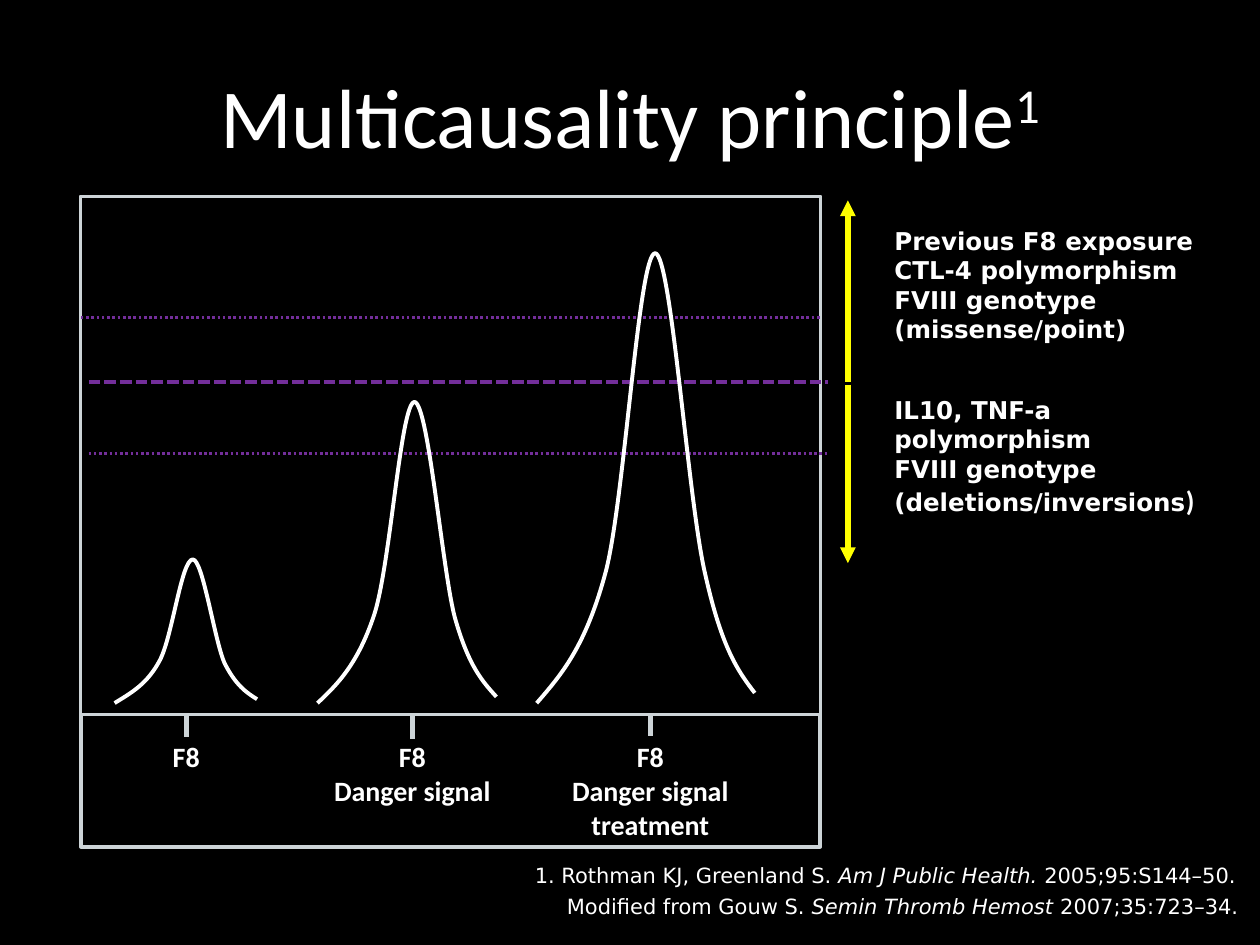
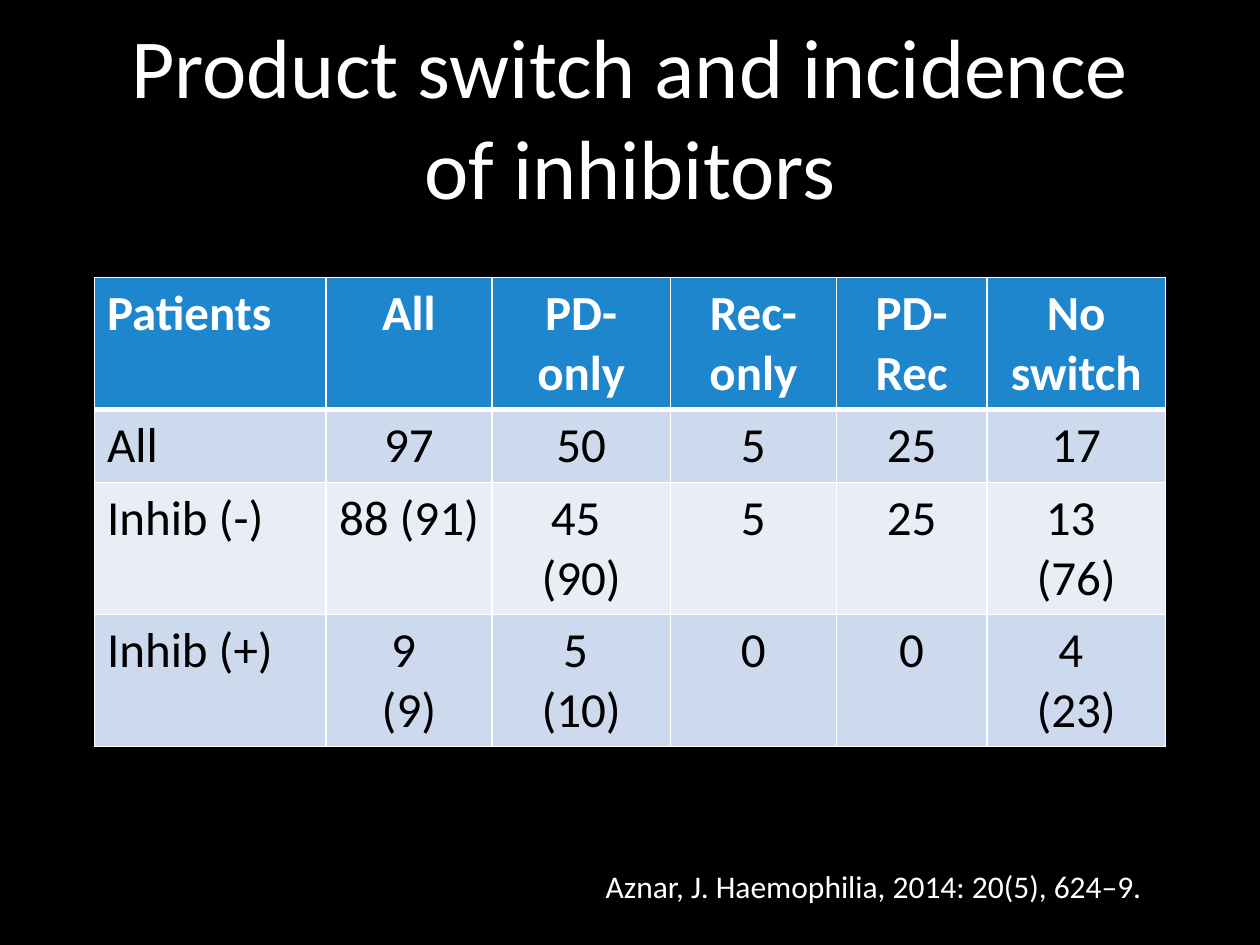
"""Build two black slides: a curve diagram and a patient table."""
from dataclasses import dataclass

from lxml import etree
from pptx import Presentation
from pptx.dml.color import RGBColor
from pptx.enum.dml import MSO_LINE
from pptx.enum.shapes import MSO_CONNECTOR, MSO_SHAPE
from pptx.enum.text import MSO_ANCHOR, PP_ALIGN
from pptx.oxml.ns import qn
from pptx.util import Pt

LEFT, MID, RIGHT = PP_ALIGN.LEFT, PP_ALIGN.CENTER, PP_ALIGN.RIGHT
TOP, CENTER = MSO_ANCHOR.TOP, MSO_ANCHOR.MIDDLE
DOT, DASH = MSO_LINE.ROUND_DOT, MSO_LINE.SQUARE_DOT
STRAIGHT, RECT = MSO_CONNECTOR.STRAIGHT, MSO_SHAPE.RECTANGLE


@dataclass(frozen=True)
class Theme:
    back: str = "000000"
    ink: str = "FFFFFF"
    edge: str = "CDD4D7"
    limit: str = "732E9A"
    arrow: str = "FFFF00"
    head: str = "1D86CD"
    bands: tuple = ("CDD9ED", "E8EDF6")
    main: str = "Calibri"
    alt: str = "DejaVu Sans"
    title: int = 48
    cell: int = 28
    cite: int = 18
    label: int = 16
    note: int = 14
    ref: int = 12


def rgb(code):
    return RGBColor.from_string(code)


class Deck:
    def __init__(self, theme):
        self.theme = theme
        self.show = Presentation()
        self.show.slide_width, self.show.slide_height = Pt(720), Pt(540)

    def page(self, title):
        self.slide = self.show.slides.add_slide(self.show.slide_layouts[6])
        fill = self.slide.background.fill
        fill.solid()
        fill.fore_color.rgb = rgb(self.theme.back)
        return self.text((54, 9.6, 612, 112.3), title, self.theme.title,
                         align=MID, anchor=CENTER)

    def style(self, run, size, font=None, color=None, bold=False, slant=False):
        face = run.font
        face.size, face.name = Pt(size), font or self.theme.main
        face.color.rgb = rgb(color or self.theme.ink)
        face.bold, face.italic = bold, slant

    def fill_text(self, frame, words, size, align, **look):
        frame.text = words
        for para in frame.paragraphs:
            para.alignment = align
            for run in para.runs:
                self.style(run, size, **look)

    def text(self, box, words, size, align=LEFT, anchor=TOP, **look):
        frame = self.slide.shapes.add_textbox(*map(Pt, box)).text_frame
        frame.word_wrap, frame.vertical_anchor = True, anchor
        self.fill_text(frame, words, size, align, **look)
        return frame.paragraphs

    def tail(self, para, words, size, **look):
        run = para.add_run()
        run.text = words
        self.style(run, size, **look)
        return run

    def refer(self, box, lead, work, rest):
        size, font = self.theme.ref, self.theme.alt
        para = self.text(box, lead, size, RIGHT, font=font)[0]
        self.tail(para, work, size, font=font, slant=True)
        self.tail(para, rest, size, font=font)

    def stroke(self, shape, color, width):
        shape.line.color.rgb, shape.line.width = rgb(color), Pt(width)

    def rect(self, box, width):
        shape = self.slide.shapes.add_shape(RECT, *map(Pt, box))
        shape.shadow.inherit = False
        shape.fill.solid()
        shape.fill.fore_color.rgb = rgb(self.theme.back)
        self.stroke(shape, self.theme.edge, width)

    def line(self, ends, color, width, dash=None, tip=False):
        link = self.slide.shapes.add_connector(STRAIGHT, *map(Pt, ends))
        self.stroke(link, color, width)
        if dash:
            link.line.dash_style = dash
        props = link.element.spPr
        if tip:
            etree.SubElement(props.find(qn("a:ln")), qn("a:tailEnd"), type="triangle")
        etree.SubElement(props, qn("a:effectLst"))

    def curve(self, dots):
        pen = self.slide.shapes.build_freeform(*map(Pt, dots[0]))
        pen.add_line_segments([(Pt(x), Pt(y)) for x, y in dots[1:]], close=False)
        shape = pen.convert_to_shape()
        legs = list(shape.element.iter(qn("a:lnTo")))
        for one, two, end in zip(*[iter(legs)] * 3):
            bend = etree.Element(qn("a:cubicBezTo"))
            one.addprevious(bend)
            for leg in (one, two, end):
                bend.append(leg[0])
                leg.getparent().remove(leg)
        shape.shadow.inherit = False
        shape.fill.background()
        self.stroke(shape, self.theme.ink, 2.25)

    def border(self, cell, sides):
        props = cell._tc.get_or_add_tcPr()
        for spot, (side, width) in enumerate(sides.items()):
            edge = etree.Element(qn(f"a:ln{side}"), w=str(Pt(width)))
            paint = etree.SubElement(edge, qn("a:solidFill"))
            etree.SubElement(paint, qn("a:srgbClr"), val=self.theme.ink)
            props.insert(spot, edge)

    def table(self, spot, wide, high, rows):
        look = self.theme
        grid = self.slide.shapes.add_table(
            len(rows), len(wide), *map(Pt, (*spot, sum(wide), sum(high)))).table
        for col, size in zip(grid.columns, wide):
            col.width = Pt(size)
        for r, row in enumerate(rows):
            grid.rows[r].height = Pt(high[r])
            top = r == 0
            for c, words in enumerate(row):
                cell = grid.cell(r, c)
                self.fill_text(cell.text_frame, words, look.cell, MID if c else LEFT,
                               color=look.ink if top else look.back, bold=top)
                cell.fill.solid()
                cell.fill.fore_color.rgb = rgb(look.head if top else look.bands[(r - 1) % 2])
                self.border(cell, {"L": 1, "R": 1, "T": 3 if r == 1 else 1,
                                   "B": 3 if top else 1})


PEAKS = [
    (106.4, 408.2, "F8",
     [(65.5, 401.8), (74.9, 396), (84.2, 391), (91.4, 377.3), (98.6, 363.6),
      (103.7, 319.7), (110.2, 319.7), (115.9, 319.7), (122.4, 365), (128.2, 378.7),
      (134.6, 391.7), (141.1, 396), (146.9, 399.6)]),
    (235.6, 409, "F8\nDanger signal",
     [(181.4, 401.8), (193, 391), (204.5, 379.4), (213.8, 351.4), (223.2, 322.6),
      (229, 229.7), (236.9, 229.7), (244.8, 230.4), (252.7, 325.4), (259.9, 352.8),
      (267.8, 380.9), (275.8, 389.5), (283.7, 398.2)]),
    (371.6, 407.5, "F8\nDanger signal\ntreatment",
     [(306.7, 401.8), (321.1, 385.2), (334.8, 369.4), (346.3, 326.2), (357.1, 283.7),
      (365, 144.7), (374.4, 144.7), (383.8, 145.4), (393.1, 287.3), (403.2, 329),
      (412.6, 370.8), (421.9, 383.8), (431.3, 396)]),
]
NOTES = [
    (125.6, 218.2, 114.5,
     "Previous F8 exposure\nCTL-4 polymorphism\nFVIII genotype\n(missense/point)"),
    (222.2, 219.8, 321.8,
     "IL10, TNF-a\npolymorphism\nFVIII genotype\n(deletions/inversions"),
]
LIMITS = [(46.2, 181.4, 1.5, DOT), (50.6, 218.2, 2.25, DASH), (50.6, 259.2, 1.5, DOT)]
ROWS = [
    ["Patients", "All", "PD-only", "Rec-only", "PD-Rec", "No switch"],
    ["All", "97", "50", "5", "25", "17"],
    ["Inhib (-)", "88 (91)", "45 \n(90)", "5", "25", "13 \n(76)"],
    ["Inhib (+)", "9 \n(9)", "5 \n(10)", "0", "0", "4 \n(23)"],
]


def causes(deck):
    look = deck.theme
    head = deck.page("Multicausality principle")[0]
    mark = deck.tail(head, "1", look.title)
    mark._r.get_or_add_rPr().set("baseline", "30000")
    for high, width in ((371.5, 2.25), (295.9, 1.5)):
        deck.rect((46.2, 112.3, 422.6, high), width)
    for x, y, width, dash in LIMITS:
        deck.line((x, y, x + 422.6, y), look.limit, width, dash)
    for top, start, end, words in NOTES:
        deck.line((484.5, start, 484.5, end), look.arrow, 3, tip=True)
        paras = deck.text((504, top, 205, 76), words, look.note, font=look.alt, bold=True)
    deck.tail(paras[-1], ")", look.label, bold=True)
    for x, y, words, dots in PEAKS:
        deck.curve(dots)
        deck.line((x, y, x, y + 13.2), look.edge, 3)
        deck.text((x - 60, 419.3, 120, 26), words, look.label, MID, bold=True)
    deck.refer((255.6, 489.2, 461.5, 21.6), "1. Rothman KJ, Greenland S. ",
               "Am J Public Health.", " 2005;95:S144–50. ")
    deck.refer((260.6, 506.9, 458, 21.6), "Modified from Gouw S. ",
               "Semin Thromb Hemost ", "2007;35:723–34. ")


def switch(deck):
    deck.page("Product switch and incidence of inhibitors")
    deck.table((54, 158.5), (132.3, 94.8, 102, 94.8, 86.1, 102),
               (75.5, 41.7, 75.5, 75.5), ROWS)
    cite = deck.text((339, 481, 345, 38), "Aznar, J. Haemophilia, 2014: 20(5), 624–9.",
                     deck.theme.cite)[0]
    cite.line_spacing, cite.space_after = 1.5, Pt(12)


def main():
    deck = Deck(Theme())
    causes(deck)
    switch(deck)
    deck.show.save("out.pptx")


if __name__ == "__main__":
    main()
